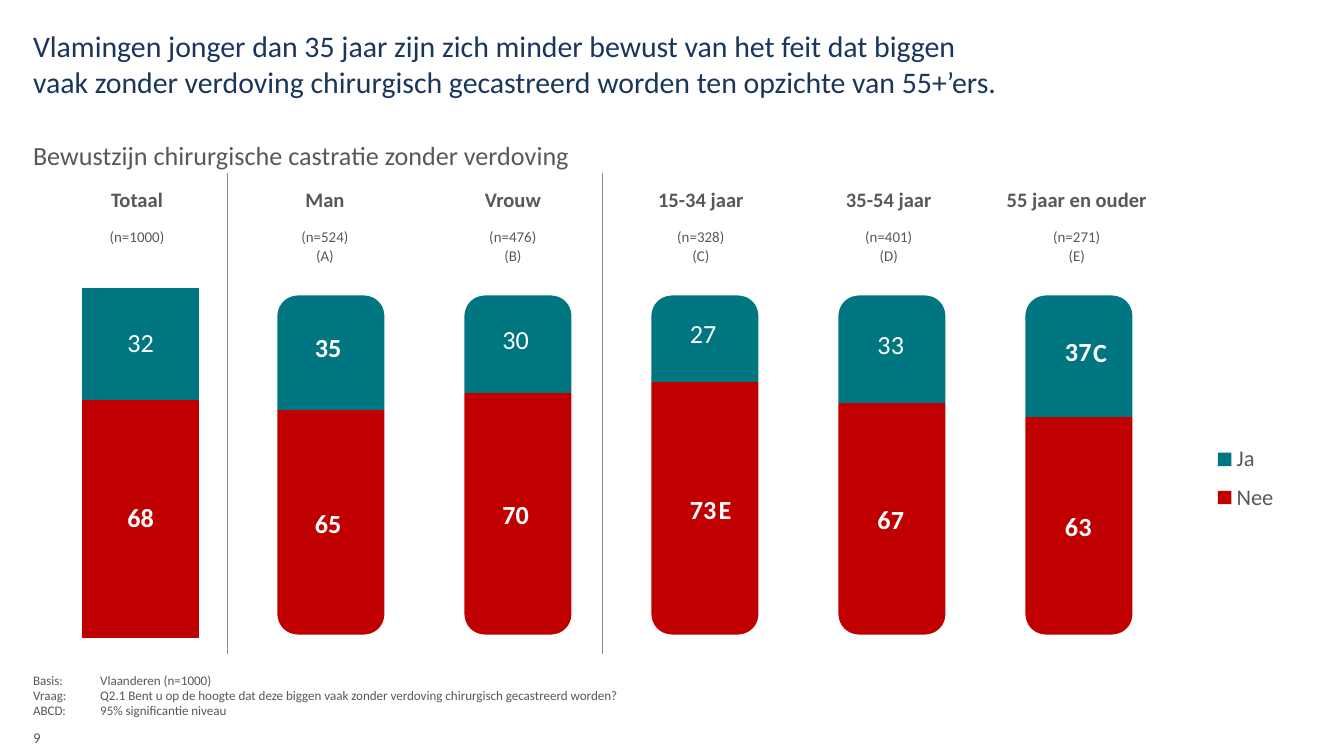
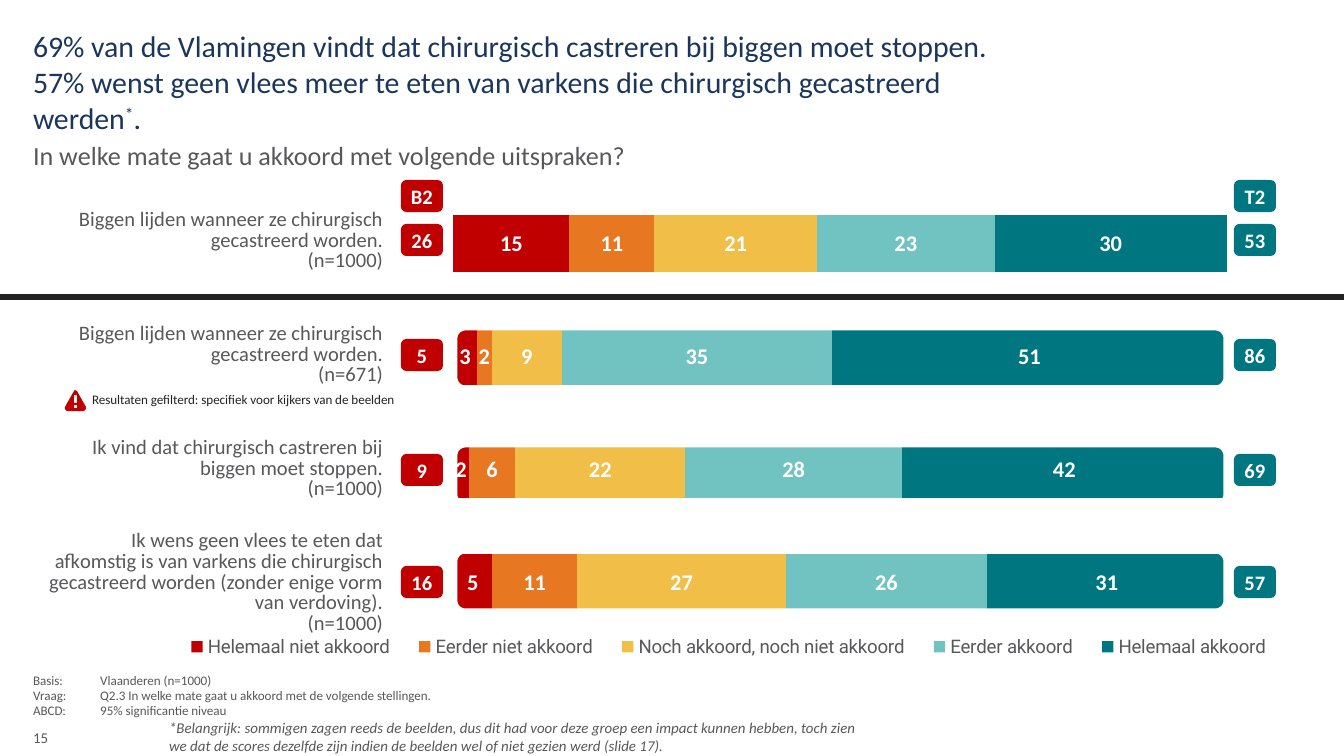
from dataclasses import dataclass
from math import cos, pi, sin

from lxml.etree import SubElement
from pptx import Presentation
from pptx.chart.data import CategoryChartData
from pptx.dml.color import RGBColor
from pptx.enum.chart import XL_CHART_TYPE, XL_LABEL_POSITION, XL_LEGEND_POSITION
from pptx.enum.shapes import MSO_CONNECTOR, MSO_SHAPE
from pptx.enum.text import MSO_ANCHOR, MSO_AUTO_SIZE, PP_ALIGN
from pptx.oxml.ns import qn
from pptx.util import Emu, Pt


@dataclass(frozen=True)
class Theme:
    font: str = "Calibri"
    legend_font: str = "Roboto"
    navy: str = "1B365D"
    gray: str = "58585B"
    rule: str = "888B8D"
    black: str = "222223"
    white: str = "FFFFFF"
    red: str = "C00000"
    orange: str = "E87722"
    yellow: str = "F1BE48"
    mint: str = "71C3C1"
    teal: str = "007681"
    heading: int = 16
    title: int = 14
    label: int = 11
    small: int = 8
    note: int = 7


THEME = Theme()

# Content: awareness by group
AWARENESS = {
    "page": "9",
    "heading": "Vlamingen jonger dan 35 jaar zijn zich minder bewust van het feit dat biggen\n"
               "vaak zonder verdoving chirurgisch gecastreerd worden ten opzichte van 55+’ers.",
    "title": "Bewustzijn chirurgische castratie zonder verdoving",
    "question": "Q2.1 Bent u op de hoogte dat deze biggen vaak zonder verdoving "
                "chirurgisch gecastreerd worden?",
}
GROUPS = [
    ["Totaal", "Man", "Vrouw", "15-34 jaar", "35-54 jaar", "55 jaar en ouder"],
    ["(n=1000)", "(n=524)", "(n=476)", "(n=328)", "(n=401)", "(n=271)"],
    ["", "(A)", "(B)", "(C)", "(D)", "(E)"],
]
AWARENESS_SERIES = [
    ("Nee", THEME.red, [68, 65, 70, 73, 67, 63]),
    ("Ja", THEME.teal, [32, 35, 30, 27, 33, 37]),
]
LIGHT_LABELS = [0, 2, 3, 4]
SIGNIFICANCE = [("E", 718, 493), ("C", 1093, 336)]

# Content: agreement with statements
AGREEMENT = {
    "page": "15",
    "heading": ("69% van de Vlamingen vindt dat chirurgisch castreren bij biggen moet stoppen. "
                "57% wenst geen vlees meer te eten van varkens die chirurgisch gecastreerd werden",
                "*", "."),
    "title": "In welke mate gaat u akkoord met volgende uitspraken?",
    "question": "Q2.3 In welke mate gaat u akkoord met de volgende stellingen.",
}
STATEMENTS = [
    ["Biggen lijden wanneer ze chirurgisch gecastreerd worden.\n(n=1000)"],
    ["Biggen lijden wanneer ze chirurgisch gecastreerd worden.\n(n=671)"],
    ["Ik vind dat chirurgisch castreren bij biggen moet stoppen.\n(n=1000)"],
    ["Ik wens geen vlees te eten dat afkomstig is van varkens die chirurgisch "
     "gecastreerd worden (zonder enige vorm van verdoving).\n(n=1000)"],
]
AGREEMENT_SERIES = [
    ("Helemaal niet akkoord", THEME.red, [15, 3, 2, 5]),
    ("Eerder niet akkoord", THEME.orange, [11, 2, 6, 11]),
    ("Noch akkoord, noch niet akkoord", THEME.yellow, [21, 9, 22, 27]),
    ("Eerder akkoord", THEME.mint, [23, 35, 28, 26]),
    ("Helemaal akkoord", THEME.teal, [30, 51, 42, 31]),
]
SCORES = [("B2", "T2", 180), ("26", "53", 224), ("5", "86", 339),
          ("9", "69", 454), ("16", "57", 566)]
FILTER_NOTE = "Resultaten gefilterd: specifiek voor kijkers van de beelden"
IMPORTANT = ("*Belangrijk: sommigen zagen reeds de beelden, dus dit had voor deze groep een impact "
             "kunnen hebben, toch zien we dat de scores dezelfde zijn indien de beelden wel of "
             "niet gezien werd (slide 17).")
WARNING_SIGN = [
    [(65, 409), (67, 411), (84, 411), (86, 409), (86, 407), (77, 391), (75, 390), (74, 391), (65, 407)],
    [(74, 395), (77, 395), (77, 403), (74, 403)],
    [(74, 405), (77, 405), (77, 408), (74, 408)],
]

EMU_PER_PX = 914400 / 134.4
SLIDE_SIZE = (1344, 756)
NO_GRID_STYLE = "{2D5ABB26-0587-4C30-8999-92F81FD0307C}"


def px(value):
    return Emu(round(value * EMU_PER_PX))


def box_emu(box):
    return [px(value) for value in box]


def rgb(color):
    return RGBColor.from_string(color)


def format_font(font, size, color, bold=False, italic=False, name=THEME.font):
    font.name, font.size, font.bold, font.italic = name, Pt(size), bold, italic
    font.color.rgb = rgb(color)


def write_text(frame, paragraphs, *, size, color=THEME.gray, bold=False, italic=False,
               align=PP_ALIGN.LEFT, line_spacing=1.0, tab=None):
    """Each paragraph is a string, or a tuple whose every second part is superscript."""
    for number, content in enumerate(paragraphs):
        paragraph = frame.paragraphs[0] if number == 0 else frame.add_paragraph()
        properties = paragraph._p.get_or_add_pPr()
        properties.set("marL", "0")
        properties.set("indent", "0")
        SubElement(properties, qn("a:buNone"))
        if tab:
            tabs = SubElement(properties, qn("a:tabLst"))
            SubElement(tabs, qn("a:tab"), pos=str(px(tab)), algn="l")
        paragraph.alignment, paragraph.line_spacing = align, line_spacing
        paragraph.space_before = Pt(0)
        if not content:
            paragraph._p.get_or_add_endParaRPr().set("sz", str(size * 100))
            continue
        parts = (content,) if isinstance(content, str) else content
        for part_number, part in enumerate(parts):
            for line_number, line in enumerate(part.split("\n")):
                if line_number:
                    paragraph.add_line_break()
                run = paragraph.add_run()
                run.text = line
                format_font(run.font, size, color, bold, italic)
                if part_number % 2:
                    run.font._element.set("baseline", "30000")


def set_frame(frame, anchor=MSO_ANCHOR.TOP, inset=(0, 0), wrap=True):
    frame.auto_size, frame.word_wrap = MSO_AUTO_SIZE.NONE, wrap
    frame.vertical_anchor = anchor
    frame.margin_left = frame.margin_right = px(inset[0])
    frame.margin_top = frame.margin_bottom = px(inset[1])


def add_text(slide, box, text, anchor=MSO_ANCHOR.TOP, inset=(0, 0), wrap=True, **style):
    shape = slide.shapes.add_textbox(*box_emu(box))
    set_frame(shape.text_frame, anchor, inset, wrap)
    write_text(shape.text_frame, [text], **style)


def fill_placeholder(shape, box, paragraphs, **style):
    shape.left, shape.top, shape.width, shape.height = box_emu(box)
    set_frame(shape.text_frame)
    write_text(shape.text_frame, paragraphs, **style)


def add_base_slide(presentation, content):
    slide = presentation.slides.add_slide(presentation.slide_layouts[3])
    title, heading, source = slide.placeholders
    fill_placeholder(title, (33, 143, 1270, 27), [content["title"]], size=THEME.title, line_spacing=0.9)
    fill_placeholder(heading, (33, 28, 988, 79), [content["heading"]], size=THEME.heading, color=THEME.navy)
    lines = ["Basis:\tVlaanderen (n=1000)", "Vraag:\t" + content["question"],
             "ABCD:\t95% significantie niveau"]
    fill_placeholder(source, (33, 673, 988, 47), lines, size=THEME.note, line_spacing=Pt(8), tab=136)
    add_text(slide, (33, 712, 46, 35), content["page"], MSO_ANCHOR.BOTTOM, wrap=False,
             size=THEME.small, line_spacing=0.85)
    return slide


def add_line(slide, start, end, color, width):
    line = slide.shapes.add_connector(MSO_CONNECTOR.STRAIGHT, *box_emu(start + end))
    line.line.color.rgb, line.line.width = rgb(color), Pt(width)
    SubElement(line._element.spPr, qn("a:effectLst"))


def add_table(slide, left, top, column_width, row_heights, rows, row_styles, inset=0):
    columns = len(rows[0])
    frame = slide.shapes.add_table(len(rows), columns, *box_emu(
        (left, top, column_width * columns, sum(row_heights))))
    table = frame.table
    table.first_row = table.horz_banding = False
    table._tbl.tblPr.find(qn("a:tableStyleId")).text = NO_GRID_STYLE
    for row, height in zip(table.rows, row_heights):
        row.height = px(height)
    for row_number, texts in enumerate(rows):
        for column, text in enumerate(texts):
            cell = table.cell(row_number, column)
            cell.fill.background()
            cell.vertical_anchor = MSO_ANCHOR.MIDDLE
            cell.margin_left = cell.margin_right = cell.margin_top = px(inset)
            cell.margin_bottom = 0
            write_text(cell.text_frame, [text], **row_styles[row_number])


def set_manual_layout(parent, index, fractions, inner=False):
    for old in parent.findall(qn("c:layout")):
        parent.remove(old)
    layout = SubElement(parent, qn("c:layout"))
    parent.insert(index, layout)
    manual = SubElement(layout, qn("c:manualLayout"))
    if inner:
        SubElement(manual, qn("c:layoutTarget"), val="inner")
    for name in ("xMode", "yMode"):
        SubElement(manual, qn("c:" + name), val="edge")
    for name, value in zip("xywh", fractions):
        SubElement(manual, qn("c:" + name), val=str(value))


def add_stacked_chart(slide, kind, box, series, *, gap, plot_area, legend_position, legend_area,
                      legend_size, legend_font, label_size, label_format):
    data = CategoryChartData()
    data.categories = [str(number + 1) for number in range(len(series[0][2]))]
    for name, _, values in series:
        data.add_series(name, values)
    chart = slide.shapes.add_chart(kind, *box_emu(box), data).chart
    chart.has_title = False
    format_font(chart.font, 18, THEME.black)
    chart.value_axis.minimum_scale, chart.value_axis.maximum_scale = 0, 100
    chart.value_axis.has_major_gridlines = False
    chart.value_axis.visible = chart.category_axis.visible = False
    plot = chart.plots[0]
    plot.gap_width, plot.overlap, plot.vary_by_categories = gap, 100, False
    for item, (_, color, _) in zip(plot.series, series):
        item.format.fill.solid()
        item.format.fill.fore_color.rgb = rgb(color)
        labels = item.data_labels
        labels.show_value, labels.position = True, XL_LABEL_POSITION.CENTER
        labels.number_format, labels.number_format_is_linked = label_format, False
        format_font(labels.font, label_size, THEME.white, bold=True)
    chart.has_legend = True
    chart.legend.position, chart.legend.include_in_layout = legend_position, False
    format_font(chart.legend.font, legend_size, THEME.gray, name=legend_font)
    set_manual_layout(chart._chartSpace.chart.plotArea, 0, plot_area, inner=True)
    set_manual_layout(chart.legend._element, 1, legend_area)
    return chart


def add_outline(slide, contours, color):
    points = [[(px(x), px(y)) for x, y in contour] for contour in contours]
    builder = slide.shapes.build_freeform(*points[0][0], scale=1.0)
    for number, contour in enumerate(points):
        if number:
            builder.move_to(*contour[0])
        builder.add_line_segments(contour[1:], close=True)
    shape = builder.convert_to_shape()
    shape.shadow.inherit = False
    shape.fill.solid()
    shape.fill.fore_color.rgb = rgb(color)
    shape.line.fill.background()


def add_corner_mask(slide, box, inset, radius):
    """A white frame whose opening rounds off the bar beneath it."""
    left, top, width, height = box
    right, bottom = left + width, top + height
    outer = [(left, top), (right, top), (right, bottom), (left, bottom)]
    near_x, far_x = left + inset + radius, right - inset - radius
    near_y, far_y = top + inset + radius, bottom - inset - radius
    centers = [(far_x, far_y), (far_x, near_y), (near_x, near_y), (near_x, far_y)]
    opening = []
    for corner, (x, y) in enumerate(centers):
        angles = [pi / 2 * (1 - corner - step / 8) for step in range(9)]
        opening += [(x + radius * cos(angle), y + radius * sin(angle)) for angle in angles]
    add_outline(slide, [outer, opening], THEME.white)


def add_badge(slide, left, top, text, color):
    badge = slide.shapes.add_shape(MSO_SHAPE.ROUNDED_RECTANGLE, *box_emu((left, top, 42, 32)))
    badge.shadow.inherit = False
    badge.fill.solid()
    badge.fill.fore_color.rgb = rgb(color)
    badge.line.fill.background()
    set_frame(badge.text_frame, MSO_ANCHOR.MIDDLE, (9, 4), wrap=False)
    write_text(badge.text_frame, [text], size=THEME.label, color=THEME.white, bold=True,
               align=PP_ALIGN.CENTER)


def build_awareness(presentation):
    slide = add_base_slide(presentation, AWARENESS)
    head = dict(size=THEME.label, bold=True, align=PP_ALIGN.CENTER)
    detail = dict(size=THEME.small, align=PP_ALIGN.CENTER)
    add_table(slide, 43, 173, 188, [55, 19, 18], GROUPS, [head, detail, detail])
    for x in (228, 603):
        add_line(slide, (x, 173), (x, 654), THEME.rule, 0.5)
    chart = add_stacked_chart(
        slide, XL_CHART_TYPE.COLUMN_STACKED, (33, 284, 1270, 367), AWARENESS_SERIES, gap=60,
        plot_area=(0.011, 0.01, 0.886, 0.955), legend_position=XL_LEGEND_POSITION.RIGHT,
        legend_area=(0.92, 0.41, 0.07, 0.24), legend_size=12, legend_font=THEME.font,
        label_size=14, label_format="#,##0")
    for point in LIGHT_LABELS:
        label = chart.plots[0].series[1].points[point].data_label
        format_font(label.font, 14, THEME.white)
        label.position = XL_LABEL_POSITION.CENTER
    for column in range(5):
        add_corner_mask(slide, (262 + 187 * column, 280, 138, 370), inset=15.5, radius=20)
    for letter, left, top in SIGNIFICANCE:
        add_text(slide, (left, top, 14, 32), letter, wrap=False, size=14, color=THEME.white,
                 bold=True, align=PP_ALIGN.CENTER)


def build_agreement(presentation):
    slide = add_base_slide(presentation, AGREEMENT)
    chart = add_stacked_chart(
        slide, XL_CHART_TYPE.BAR_STACKED, (28, 177, 1274, 492), AGREEMENT_SERIES, gap=100,
        plot_area=(0.334, 0.02, 0.607, 0.92), legend_position=XL_LEGEND_POSITION.TOP,
        legend_area=(0.11, 0.93, 0.88, 0.05), legend_size=10, legend_font=THEME.legend_font,
        label_size=12, label_format="0;;")
    chart.category_axis.reverse_order = True
    chart.value_axis.major_unit = 20
    for top in (313, 430, 536):
        add_corner_mask(slide, (440, top, 801, 90), inset=17.5, radius=8)
    statement = dict(size=THEME.label, align=PP_ALIGN.RIGHT, line_spacing=Pt(11))
    add_table(slide, 48, 185, 336, [114] * 4, STATEMENTS, [statement] * 4, inset=1)
    for bottom_two, top_two, top in SCORES:
        add_badge(slide, 401, top, bottom_two, THEME.red)
        add_badge(slide, 1234, top, top_two, THEME.teal)
    add_line(slide, (0, 297), (1344, 297), THEME.black, 3)
    add_outline(slide, WARNING_SIGN, THEME.red)
    add_text(slide, (92, 392, 402, 16), FILTER_NOTE, size=THEME.note, color=THEME.black)
    add_text(slide, (156, 712, 722, 50), IMPORTANT, inset=(13, 7), size=THEME.small, italic=True)


def main():
    presentation = Presentation()
    presentation.slide_width, presentation.slide_height = box_emu(SLIDE_SIZE)
    build_awareness(presentation)
    build_agreement(presentation)
    presentation.save("out.pptx")


if __name__ == "__main__":
    main()
